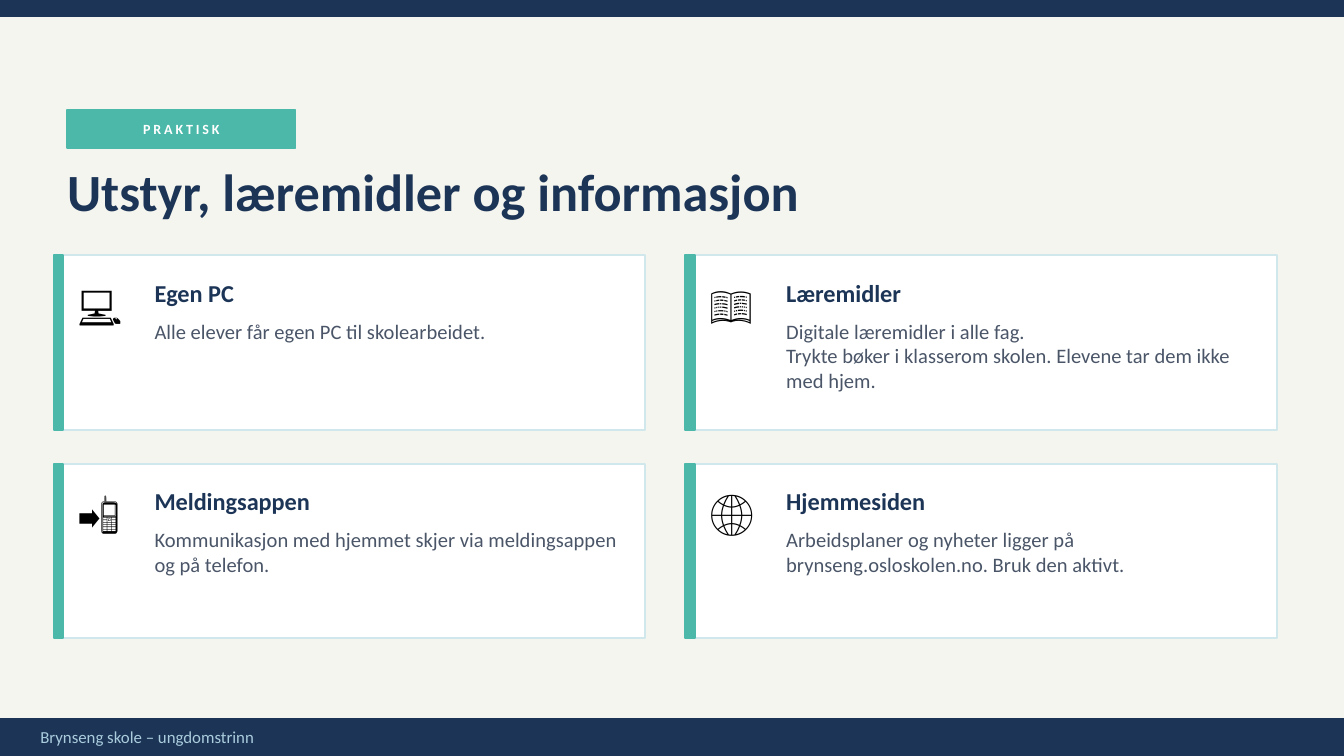
from pptx import Presentation
from pptx.dml.color import RGBColor
from pptx.enum.shapes import MSO_SHAPE
from pptx.enum.text import MSO_ANCHOR, MSO_AUTO_SIZE, PP_ALIGN
from pptx.util import Pt

RECTANGLE = MSO_SHAPE.RECTANGLE
TOP, MIDDLE = MSO_ANCHOR.TOP, MSO_ANCHOR.MIDDLE
LEFT, CENTER = PP_ALIGN.LEFT, PP_ALIGN.CENTER
TITLE_ONLY = 5

FONT = "Calibri"
COLORS = {
    "background": "F5F5F0",
    "navy": "1C3557",
    "teal": "4BB8A9",
    "white": "FFFFFF",
    "card border": "D0E8EC",
    "footer text": "AACCDD",
    "body text": "4A5568",
    "icon": "000000",
}
WIDTH, HEIGHT = 720, 405
CARD_WIDTH, CARD_HEIGHT = 316.8, 93.6
GAP_X, GAP_Y = 21.6, 18
CARDS = [
    ("💻", "Egen PC", ["Alle elever får egen PC til skolearbeidet."]),
    ("📖", "Læremidler", [
        "Digitale læremidler i alle fag.",
        "Trykte bøker i klasserom skolen. Elevene tar dem ikke med hjem.",
    ]),
    ("📲", "Meldingsappen", [
        "Kommunikasjon med hjemmet skjer via meldingsappen og på telefon.",
    ]),
    ("🌐", "Hjemmesiden", [
        "Arbeidsplaner og nyheter ligger på brynseng.osloskolen.no. Bruk den aktivt.",
    ]),
]


def rgb(color):
    return RGBColor.from_string(COLORS[color])


def add_panel(slide, x, y, w, h, fill, border=None):
    panel = slide.shapes.add_shape(RECTANGLE, Pt(x), Pt(y), Pt(w), Pt(h))
    panel.shadow.inherit = False
    panel.fill.solid()
    panel.fill.fore_color.rgb = rgb(fill)
    panel.line.color.rgb = rgb(border or fill)
    panel.line.width = Pt(1)


def write(frame, lines, size, color, bold=False, align=LEFT, anchor=MIDDLE, tracking=0):
    """Fill a text frame without insets, one paragraph per line; tracking is in points."""
    frame.margin_left = frame.margin_right = frame.margin_top = frame.margin_bottom = 0
    frame.word_wrap = True
    frame.auto_size = MSO_AUTO_SIZE.NONE
    frame.vertical_anchor = anchor
    for index, line in enumerate(lines):
        paragraph = frame.add_paragraph() if index else frame.paragraphs[0]
        paragraph.alignment = align
        run = paragraph.add_run()
        run.text = line
        run.font.name = FONT
        run.font.size = Pt(size)
        run.font.bold = bold
        run.font.color.rgb = rgb(color)
        if tracking:
            run.font._element.set("spc", str(int(tracking * 100)))


def add_text(slide, x, y, w, h, lines, size, color, **style):
    box = slide.shapes.add_textbox(Pt(x), Pt(y), Pt(w), Pt(h))
    write(box.text_frame, lines, size, color, **style)


def add_footer(slide, x, y, w, h):
    add_panel(slide, x, y, w, h, "navy")
    add_text(slide, x + 21.6, y + 0.72, w - 43.2, 17.28,
             ["Brynseng skole – ungdomstrinn"], 9, "footer text")


def add_heading(slide, x, y, w):
    """Place the section tag with the slide title below it."""
    tag = (x, y, 122.4, 20.16)
    add_panel(slide, *tag, "teal")
    add_text(slide, *tag, ["PRAKTISK"], 7.5, "white", bold=True, align=CENTER, tracking=1.5)
    title = slide.shapes.title
    title.left, title.top, title.width, title.height = Pt(x), Pt(y + 19.44), Pt(w), Pt(46.8)
    write(title.text_frame, ["Utstyr, læremidler og informasjon"], 28, "navy", bold=True)


def add_card(slide, x, y, w, h, icon, heading, body):
    add_panel(slide, x, y, w, h, "white", "card border")
    add_panel(slide, x, y, 5.04, h, "teal")
    add_text(slide, x + 12.96, y + 5.76, 39.6, 39.6, [icon], 22, "icon")
    text_x, text_width = x + 54, w - 64.8
    add_text(slide, text_x, y + 7.2, text_width, 25.2, [heading], 13, "navy", bold=True)
    add_text(slide, text_x, y + 33.84, text_width, 54, body, 11, "body text", anchor=TOP)


def add_card_grid(slide, x, y):
    for index, card in enumerate(CARDS):
        row, column = divmod(index, 2)
        add_card(slide, x + column * (CARD_WIDTH + GAP_X), y + row * (CARD_HEIGHT + GAP_Y),
                 CARD_WIDTH, CARD_HEIGHT, *card)


def main():
    deck = Presentation()
    deck.slide_width, deck.slide_height = Pt(WIDTH), Pt(HEIGHT)
    slide = deck.slides.add_slide(deck.slide_layouts[TITLE_ONLY])
    slide.background.fill.solid()
    slide.background.fill.fore_color.rgb = rgb("background")

    add_panel(slide, 0, 0, WIDTH, 8.64, "navy")
    add_footer(slide, 0, 385.2, WIDTH, HEIGHT - 385.2)
    add_heading(slide, 36, 59.04, 648)
    add_card_grid(slide, 28.8, 136.8)
    deck.save("out.pptx")


if __name__ == "__main__":
    main()
